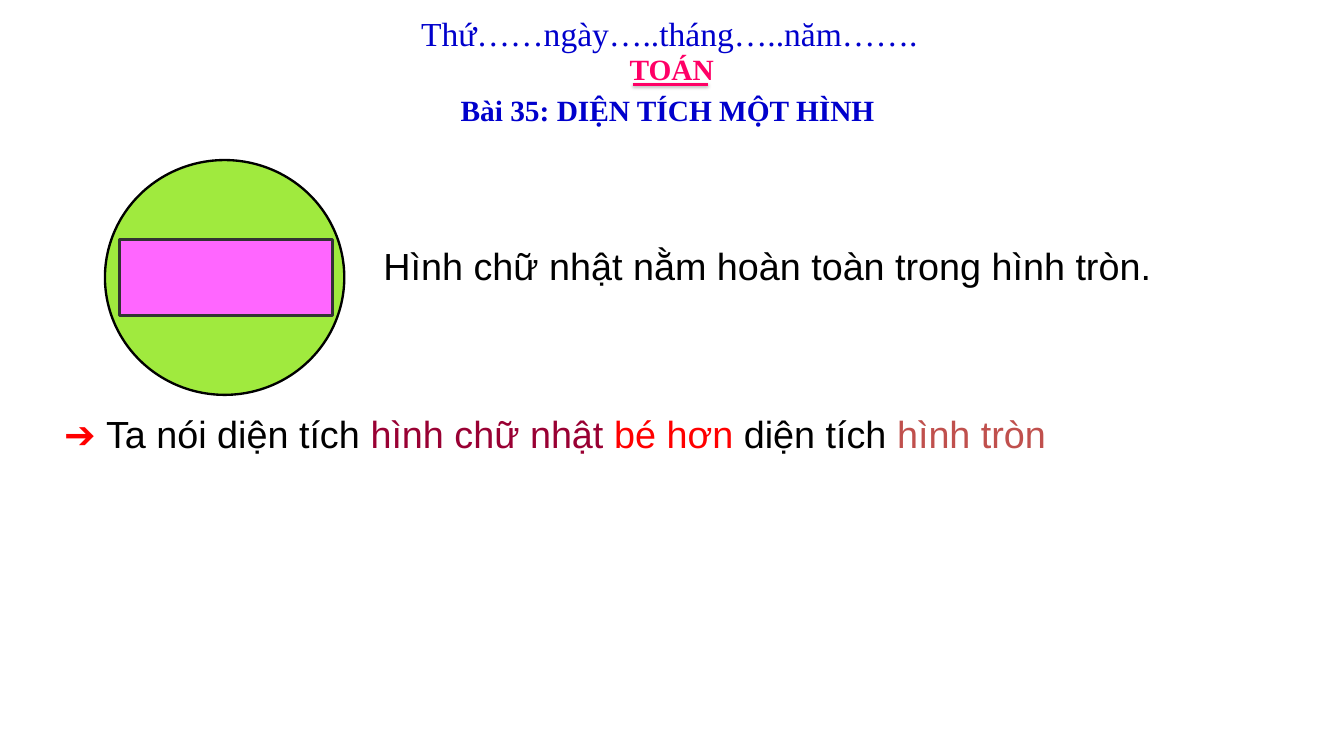
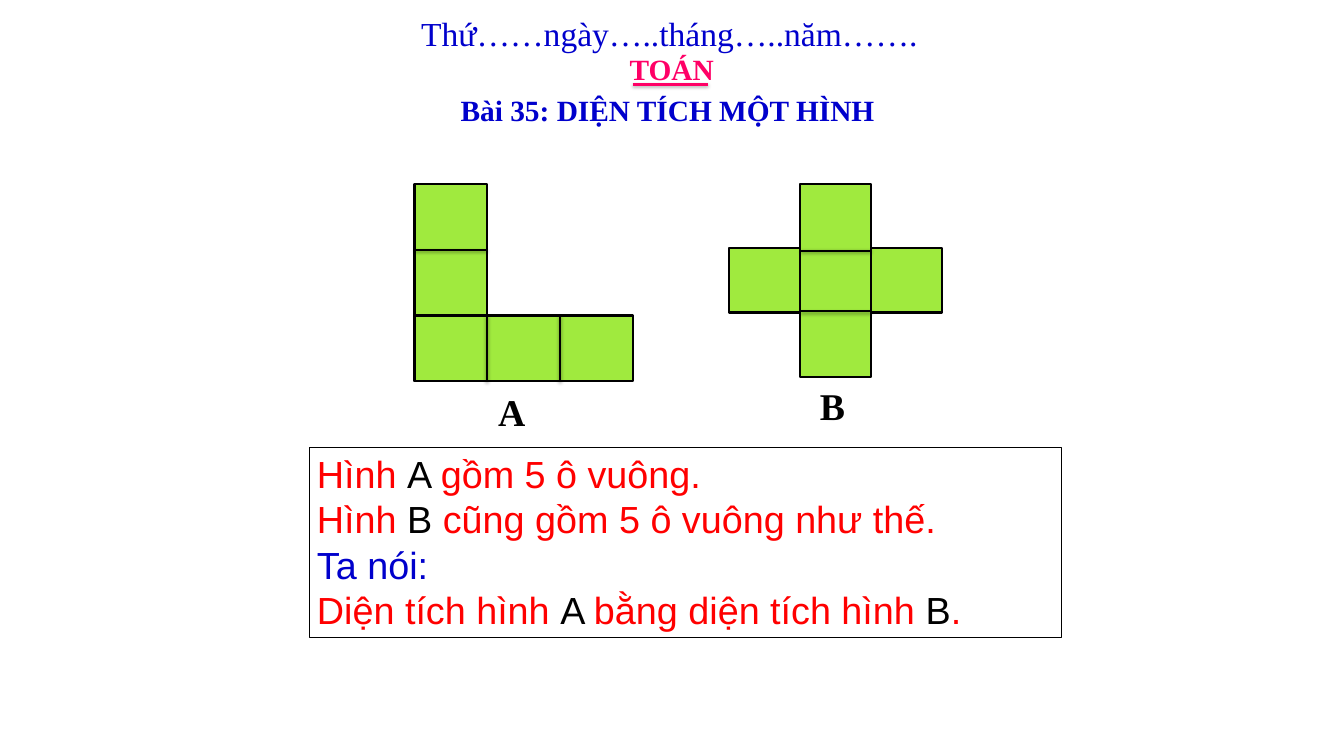
from lxml import etree
from pptx import Presentation
from pptx.dml.color import RGBColor
from pptx.enum import shapes, text
from pptx.oxml import ns
from pptx.util import Inches, Pt

BLUE = RGBColor(0x00, 0x00, 0xCC)
PINK = RGBColor(0xFF, 0x00, 0x66)
BLACK = RGBColor(0x00, 0x00, 0x00)
WHITE = RGBColor(0xFF, 0xFF, 0xFF)
RED = RGBColor(0xFF, 0x00, 0x00)
GREEN = RGBColor(0xA0, 0xEA, 0x3E)
MAGENTA = RGBColor(0xFF, 0x66, 0xFF)
CHARCOAL = RGBColor(0x33, 0x33, 0x33)
MAROON = RGBColor(0x99, 0x00, 0x33)
BRICK = RGBColor(0xC0, 0x50, 0x4D)

SERIF, SANS = "Times New Roman", "Arial"
TITLE_ONLY = 5
RECT, OVAL = shapes.MSO_SHAPE.RECTANGLE, shapes.MSO_SHAPE.OVAL


class Lesson:
    """Holds the presentation, the current slide and the shared style."""

    def __init__(self):
        self.prs = Presentation()
        self.prs.slide_width, self.prs.slide_height = Inches(17.8), Inches(10)
        self.slide = None

    def new_slide(self):
        """Add a slide with the date, subject and lesson heading."""
        self.slide = self.prs.slides.add_slide(self.prs.slide_layouts[TITLE_ONLY])
        self.add_text((5.48, 0.12, 6.84, 0.64), [[("Thứ……ngày…..tháng…..năm…….", BLUE)]],
                      size=32, font=SERIF, wrap=False)
        self.add_text((8.24, 0.63, 1.33, 0.57), [[("TOÁN", PINK)]],
                      size=28, font=SERIF, bold=True, wrap=False)
        self.add_line((8.38, 1.12), (9.38, 1.12), PINK)
        self.set_title("Bài 35: DIỆN TÍCH MỘT HÌNH")

    def set_title(self, words):
        heading = self.slide.shapes.title
        heading.left, heading.top = Inches(4.16), Inches(1.14)
        heading.width, heading.height = Inches(9.36), Inches(0.63)
        frame = heading.text_frame
        frame.margin_left = frame.margin_right = Inches(0.16)
        frame.margin_top = frame.margin_bottom = Inches(0.08)
        self.fill_text(frame, [[(words, BLUE)]], 28, SERIF, True)
        frame.paragraphs[0].alignment = text.PP_ALIGN.CENTER

    def fill_text(self, frame, lines, size, font, bold, wrap=True):
        """Set lines, each a list of (words, colour) pieces."""
        frame.word_wrap = wrap
        frame.auto_size = text.MSO_AUTO_SIZE.NONE
        frame.vertical_anchor = text.MSO_ANCHOR.TOP
        for number, pieces in enumerate(lines):
            paragraph = frame.add_paragraph() if number else frame.paragraphs[0]
            for words, colour in pieces:
                run = paragraph.add_run()
                run.text = words
                run.font.name, run.font.size, run.font.bold = font, Pt(size), bold
                run.font.color.rgb = colour

    def add_text(self, box, lines, size=36, font=SANS, bold=False, wrap=True):
        label = self.slide.shapes.add_textbox(*map(Inches, box))
        self.fill_text(label.text_frame, lines, size, font, bold, wrap)
        return label

    def paint(self, shape, fill, colour, width):
        shape.fill.solid()
        shape.fill.fore_color.rgb = fill
        shape.line.color.rgb = colour
        shape.line.width = Pt(width)

    def add_figure(self, kind, box, fill=GREEN, colour=BLACK, width=2):
        shape = self.slide.shapes.add_shape(kind, *map(Inches, box))
        shape.shadow.inherit = False
        self.paint(shape, fill, colour, width)

    def add_line(self, start, end, colour=BLACK):
        """Draw a 2 pt line with a soft shadow below it."""
        rule = self.slide.shapes.add_connector(
            shapes.MSO_CONNECTOR.STRAIGHT, *map(Inches, start + end))
        rule.line.color.rgb = colour
        rule.line.width = Pt(2)
        effects = etree.SubElement(rule._element.spPr, ns.qn("a:effectLst"))
        shadow = etree.SubElement(effects, ns.qn("a:outerShdw"), blurRad="40000",
                                  dist="20000", dir="5400000", rotWithShape="0")
        black = etree.SubElement(shadow, ns.qn("a:srgbClr"), val="000000")
        etree.SubElement(black, ns.qn("a:alpha"), val="38000")

    def name_figure(self, letter, box):
        self.add_text(box, [[(letter, BLACK)]], font=SERIF, bold=True)


def compare_areas(lesson):
    lesson.new_slide()
    # Rectangle inside the circle
    lesson.add_figure(OVAL, (1.39, 2.12, 3.17, 3.11), width=2.25)
    lesson.add_figure(RECT, (1.58, 3.17, 2.83, 1.01), MAGENTA, CHARCOAL, 3)
    lesson.add_text((4.98, 3.17, 10.73, 1.67),
                    [[("Hình chữ nhật nằm hoàn toàn trong hình tròn.", BLACK)]])
    # Conclusion
    lesson.add_text((0.75, 5.39, 16.57, 0.71), [[
        ("➔ ", RED), ("Ta nói diện tích ", BLACK), ("hình chữ nhật ", MAROON),
        ("bé hơn ", RED), ("diện tích ", BLACK), ("hình tròn", BRICK)]])


def equal_areas(lesson):
    lesson.new_slide()
    top = 2.44

    # Figure B: a cross of five cells
    left, cell = 9.66, 0.94
    inner_left, inner_right = left + cell, left + 2 * cell
    lesson.add_figure(RECT, (left, 3.29, 3 * cell, 0.85))
    lesson.add_figure(RECT, (inner_left, top, cell, 2.56))
    for y in (3.32, 4.12):
        lesson.add_line((inner_left, y), (inner_right, y))
    lesson.name_figure("B", (10.76, 5.02, 2.27, 0.71))

    # Figure A: an L of five cells
    left, width, row = 5.49, 2.89, 0.87
    cell = width / 3
    base = top + 2 * row
    lesson.add_figure(RECT, (left, top, cell, 3 * row))
    lesson.add_figure(RECT, (left, base, width, row))
    lesson.add_line((left, top + row), (left + cell, top + row))
    for column in (1, 2):
        x = left + column * cell
        lesson.add_line((x, base), (x, base + row))
    lesson.name_figure("A", (6.5, 5.1, 1.77, 0.71))

    # Conclusion in a frame
    conclusion = lesson.add_text((4.1, 5.92, 9.96, 2.52), [
        [("Hình ", RED), ("A ", BLACK), ("gồm 5 ô vuông.", RED)],
        [("Hình ", RED), ("B ", BLACK), ("cũng gồm 5 ô vuông như thế.", RED)],
        [("Ta nói:", BLUE)],
        [("Diện tích hình ", RED), ("A ", BLACK), ("bằng diện tích hình ", RED),
         ("B", BLACK), (".", RED)],
    ])
    lesson.paint(conclusion, WHITE, BLACK, 0.75)


def main():
    lesson = Lesson()
    compare_areas(lesson)
    equal_areas(lesson)
    lesson.prs.save("out.pptx")


if __name__ == "__main__":
    main()
